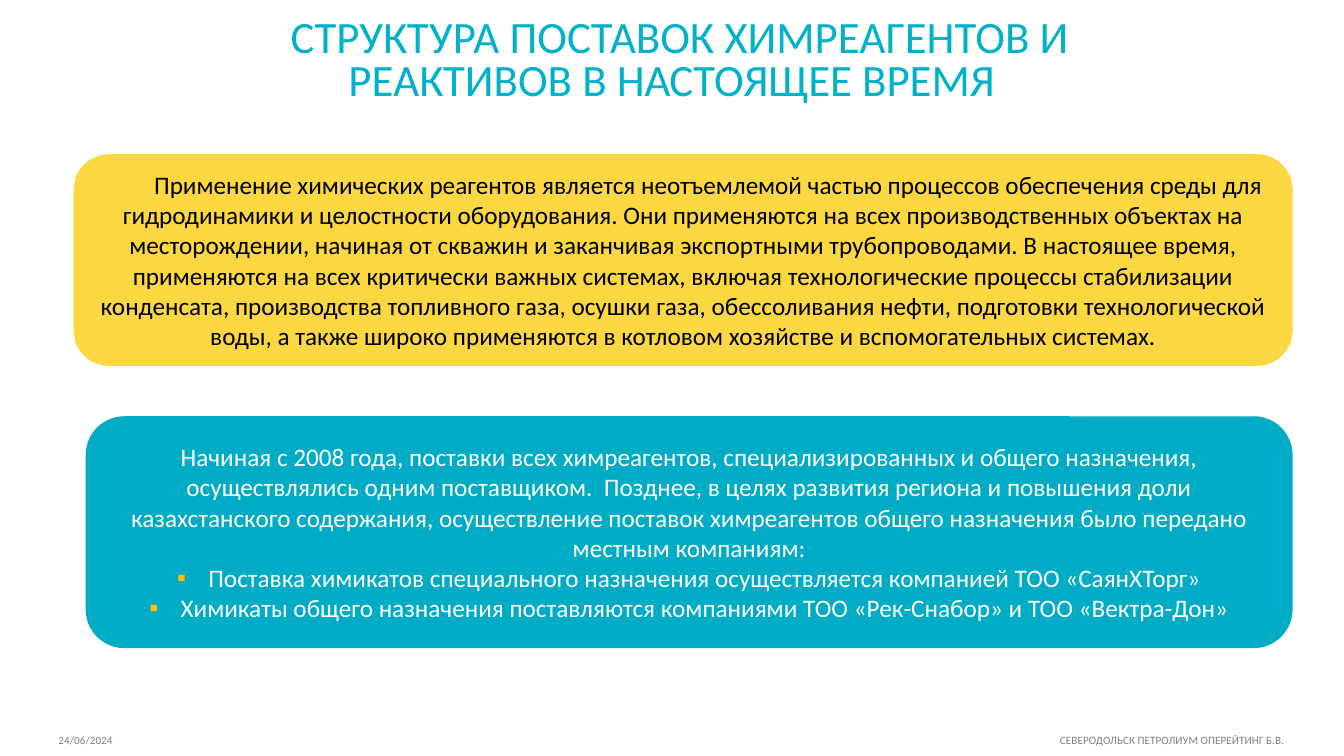
"""Build the slide on the current structure of chemical reagent supplies."""
import pptx
import pptx.dml.color
import pptx.enum.shapes
import pptx.enum.text
import pptx.oxml
import pptx.oxml.ns
import pptx.util
from pptx.util import Inches

TITLE_TEAL = pptx.dml.color.RGBColor(0x01, 0xB1, 0xC9)
PANEL_TEAL = pptx.dml.color.RGBColor(0x00, 0xAB, 0xC5)
YELLOW = pptx.dml.color.RGBColor(0xFB, 0xD7, 0x41)
BULLET_AMBER = pptx.dml.color.RGBColor(0xFF, 0xC0, 0x00)
BLACK = pptx.dml.color.RGBColor(0x00, 0x00, 0x00)
WHITE = pptx.dml.color.RGBColor(0xFF, 0xFF, 0xFF)
GREY = pptx.dml.color.RGBColor(0x80, 0x80, 0x80)
NS = pptx.oxml.ns.nsdecls("a")


def write_lines(frame, lines, size, color, align):
    frame.word_wrap = True
    frame.text = "\n".join(lines)
    for paragraph in frame.paragraphs:
        paragraph.alignment = align
        for run in paragraph.runs:
            run.font.name = "Calibri"
            run.font.size = pptx.util.Pt(size)
            run.font.color.rgb = color


presentation = pptx.Presentation()
presentation.slide_width = Inches(13.33)
presentation.slide_height = Inches(7.5)
slide = presentation.slides.add_slide(presentation.slide_layouts[6])
CENTER = pptx.enum.text.PP_ALIGN.CENTER
MIDDLE = pptx.enum.text.MSO_ANCHOR.MIDDLE

title = slide.shapes.add_textbox(Inches(0), Inches(0.19), Inches(13.33), Inches(0.85)).text_frame
title.vertical_anchor = MIDDLE
write_lines(title, ["СТРУКТУРА ПОСТАВОК ХИМРЕАГЕНТОВ И", "РЕАКТИВОВ В НАСТОЯЩЕЕ ВРЕМЯ"],
            32, TITLE_TEAL, CENTER)
for title_line in title.paragraphs:
    title_line.line_spacing = 0.8
title.paragraphs[0]._p.get_or_add_pPr().set("marL", str(Inches(0.16)))

usage_lines = [
    "Применение химических реагентов является неотъемлемой частью процессов обеспечения среды для "
    "гидродинамики и целостности оборудования. Они применяются на всех производственных объектах на "
    "месторождении, начиная от скважин и заканчивая экспортными трубопроводами. В настоящее время, "
    "применяются на всех критически важных системах, включая технологические процессы стабилизации "
    "конденсата, производства топливного газа, осушки газа, обессоливания нефти, подготовки "
    "технологической воды, а также широко применяются в котловом хозяйстве и вспомогательных системах.",
]
supply_lines = [
    "Начиная с 2008 года, поставки всех химреагентов, специализированных и общего назначения, "
    "осуществлялись одним поставщиком.  Позднее, в целях развития региона и повышения доли "
    "казахстанского содержания, осуществление поставок химреагентов общего назначения было передано "
    "местным компаниям:",
    "Поставка химикатов специального назначения осуществляется компанией ТОО «СаянХТорг»",
    "Химикаты общего назначения поставляются компаниями ТОО «Рек-Снабор» и ТОО «Вектра-Дон»",
]
panels = [
    (0.73, 1.53, 2.1, YELLOW, BLACK, usage_lines),
    (0.85, 4.13, 2.3, PANEL_TEAL, WHITE, supply_lines),
]
PANEL_RIGHT = 12.82
panel_frames = []
for left, top, height, fill, ink, lines in panels:
    panel = slide.shapes.add_shape(
        pptx.enum.shapes.MSO_SHAPE.ROUNDED_RECTANGLE,
        Inches(left), Inches(top), Inches(PANEL_RIGHT - left), Inches(height))
    panel.shadow.inherit = False
    panel.fill.solid()
    panel.fill.fore_color.rgb = fill
    panel.line.fill.background()
    panel.text_frame.vertical_anchor = MIDDLE
    write_lines(panel.text_frame, lines, 18, ink, CENTER)
    panel_frames.append(panel.text_frame)

usage, supply = panel_frames
usage.paragraphs[0]._p.get_or_add_pPr().set("indent", str(Inches(0.5)))
for supplier in supply.paragraphs[1:]:
    properties = supplier._p.get_or_add_pPr()
    properties.set("marL", str(Inches(0.31)))
    properties.set("indent", str(Inches(-0.31)))
    for bullet_part in (
        f'<a:buClr {NS}><a:srgbClr val="{BULLET_AMBER}"/></a:buClr>',
        f'<a:buFont {NS} typeface="Calibri"/>',
        f'<a:buChar {NS} char="▪"/>',
    ):
        properties.append(pptx.oxml.parse_xml(bullet_part))

footer = slide.shapes.add_textbox(Inches(0.01), Inches(7.23), Inches(13.33), Inches(0.28)).text_frame
footer.margin_left = Inches(0.57)
write_lines(footer, ["24/06/2024\tСЕВЕРОДОЛЬСК ПЕТРОЛИУМ ОПЕРЕЙТИНГ Б.В."], 8, GREY,
            pptx.enum.text.PP_ALIGN.LEFT)
footer.paragraphs[0]._p.get_or_add_pPr().append(pptx.oxml.parse_xml(
    f'<a:tabLst {NS}><a:tab pos="{Inches(12.16)}" algn="r"/></a:tabLst>'))

presentation.save("out.pptx")
